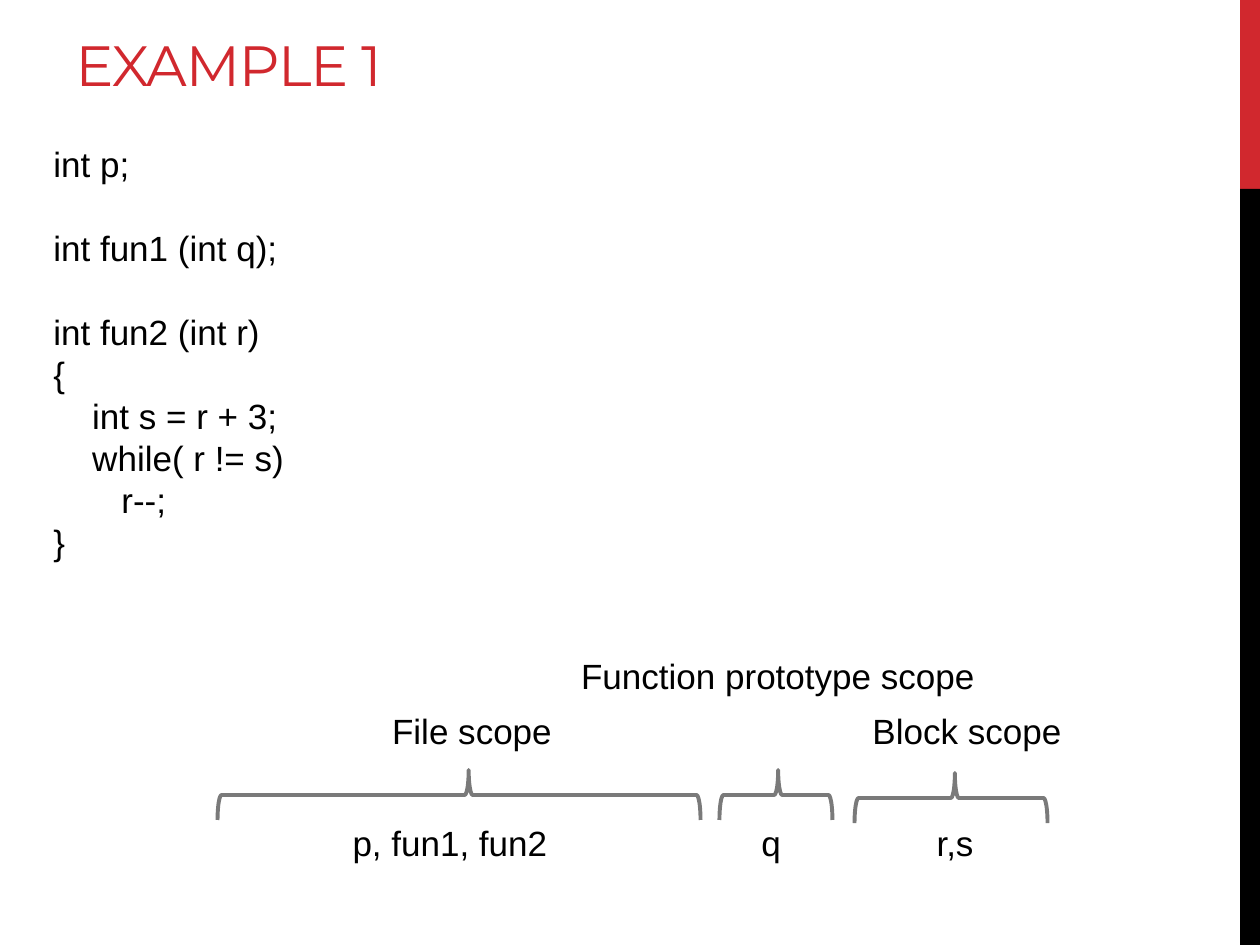
"""Build the slide on the scope of identifiers in a short C program."""
from dataclasses import dataclass

from pptx import Presentation
from pptx.dml.color import RGBColor
from pptx.enum.shapes import MSO_SHAPE
from pptx.enum.text import MSO_ANCHOR, MSO_AUTO_SIZE, PP_ALIGN
from pptx.util import Emu, Pt


@dataclass(frozen=True)
class Theme:
    red: RGBColor = RGBColor(0xD1, 0x28, 0x2E)
    black: RGBColor = RGBColor(0, 0, 0)
    gray: RGBColor = RGBColor(0x7A, 0x7A, 0x7A)
    title_font: str = "Montserrat"
    body_font: str = "Arial"
    title_size: Pt = Pt(32.4)
    body_size: Pt = Pt(20)
    blank_line: Pt = Pt(24)
    brace_line: Pt = Pt(2.25)


def px(*lengths):
    return [Emu(round(length * 914400 / 126)) for length in lengths]


def add_text(shapes, place, lines, align):
    box = shapes.add_textbox(*px(*place))
    frame = box.text_frame
    frame.word_wrap = True
    for index, (text, space_before) in enumerate(lines):
        para = frame.add_paragraph() if index else frame.paragraphs[0]
        para.alignment = align
        if space_before:
            para.space_before = space_before
        span = para.add_run()
        span.text = text
        span.font.name = theme.body_font
        span.font.size = theme.body_size
        span.font.color.rgb = theme.black


theme = Theme()
deck = Presentation()
deck.slide_width, deck.slide_height = px(1260, 945)
page = deck.slides.add_slide(deck.slide_layouts[5])

for top, height, color in [(0, 189, theme.red), (189, 756, theme.black)]:
    band = page.shapes.add_shape(MSO_SHAPE.RECTANGLE, *px(1240, top, 20, height))
    band.shadow.inherit = False
    band.fill.solid()
    band.fill.fore_color.rgb = color
    band.line.fill.background()

title = page.shapes.title
title.left, title.top, title.width, title.height = px(63, 21, 1137, 83)
title.text_frame.auto_size = MSO_AUTO_SIZE.NONE
title.text_frame.vertical_anchor = MSO_ANCHOR.BOTTOM
para = title.text_frame.paragraphs[0]
para.alignment = PP_ALIGN.LEFT
span = para.add_run()
span.text = "EXAMPLE 1"
span.font.name = theme.title_font
span.font.size = theme.title_size
span.font.color.rgb = theme.red
span._r.get_or_add_rPr().set("spc", "-60")

code = [
    ("int p;", None),
    ("int fun1 (int q);", theme.blank_line),
    ("int fun2 (int r)", theme.blank_line),
    ("{", None),
    ("    int s = r + 3;", None),
    ("    while( r != s)", None),
    ("       r--;", None),
    ("}", None),
]
add_text(page.shapes, (41, 136, 1158, 437), code, PP_ALIGN.LEFT)

brace_depth, text_height, names_top = 50, 55, 815
scopes = [
    # scope, label centre and top, brace centre and span, names and their centre
    ("File scope", 472, 703, 459, 795, 483, "p, fun1, fun2", 450),
    ("Block scope", 967, 703, 951, 798, 193, "r,s", 955),
    ("Function prototype scope", 778, 648, 776, 795, 113, "q", 771),
]
for scope, label_x, label_top, brace_x, brace_y, length, names, names_x in scopes:
    group = page.shapes.add_group_shape()
    brace = group.shapes.add_shape(
        MSO_SHAPE.RIGHT_BRACE,
        *px(brace_x - brace_depth / 2, brace_y - length / 2, brace_depth, length))
    brace.rotation = 270
    brace.adjustments[0] = 0.08
    brace.adjustments[1] = 0.52
    brace.shadow.inherit = False
    brace.fill.background()
    brace.line.color.rgb = theme.gray
    brace.line.width = theme.brace_line
    add_text(group.shapes, (label_x - 211, label_top, 422, text_height),
             [(scope, None)], PP_ALIGN.CENTER)
    add_text(page.shapes, (names_x - 130, names_top, 260, text_height),
             [(names, None)], PP_ALIGN.CENTER)

deck.save("out.pptx")
